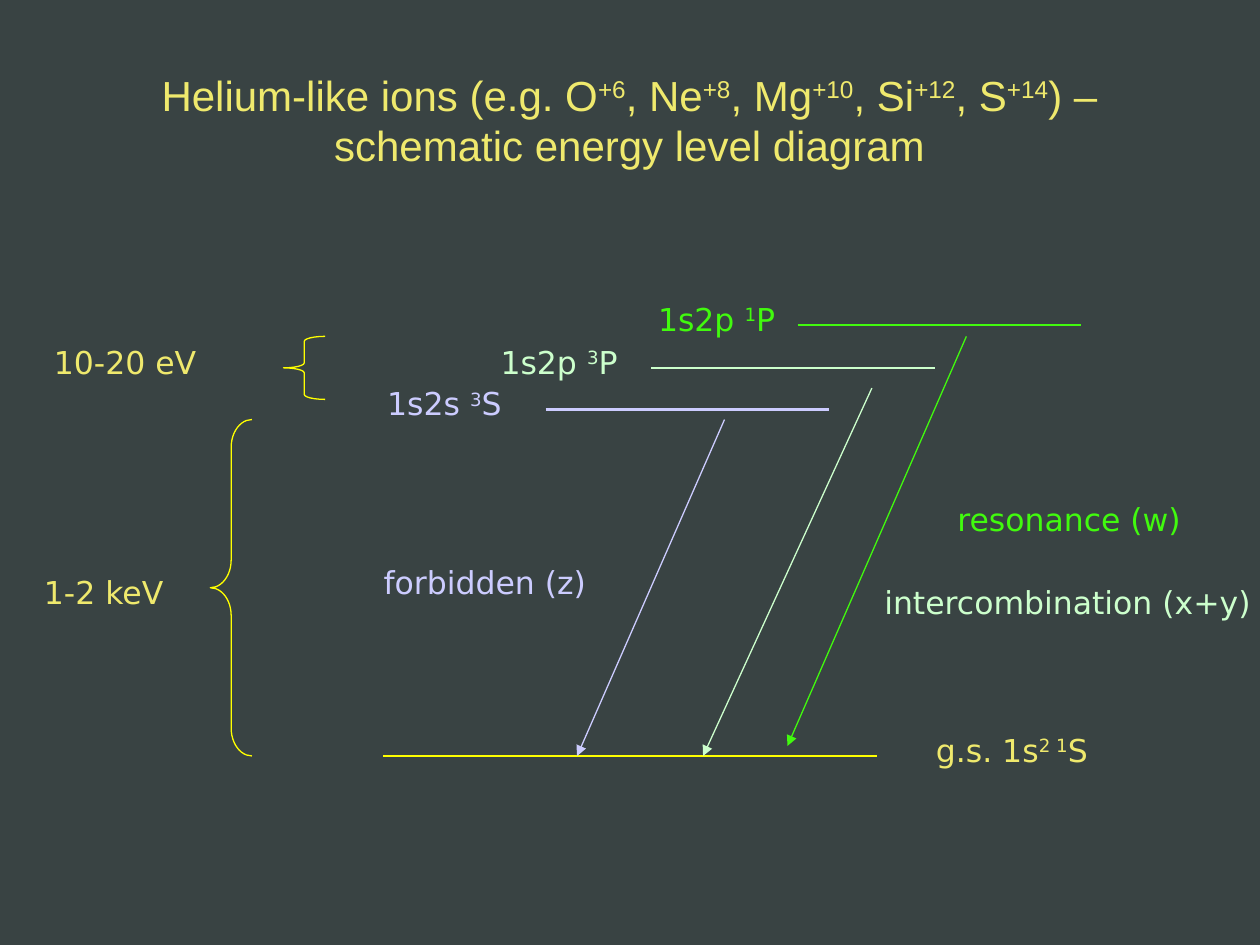
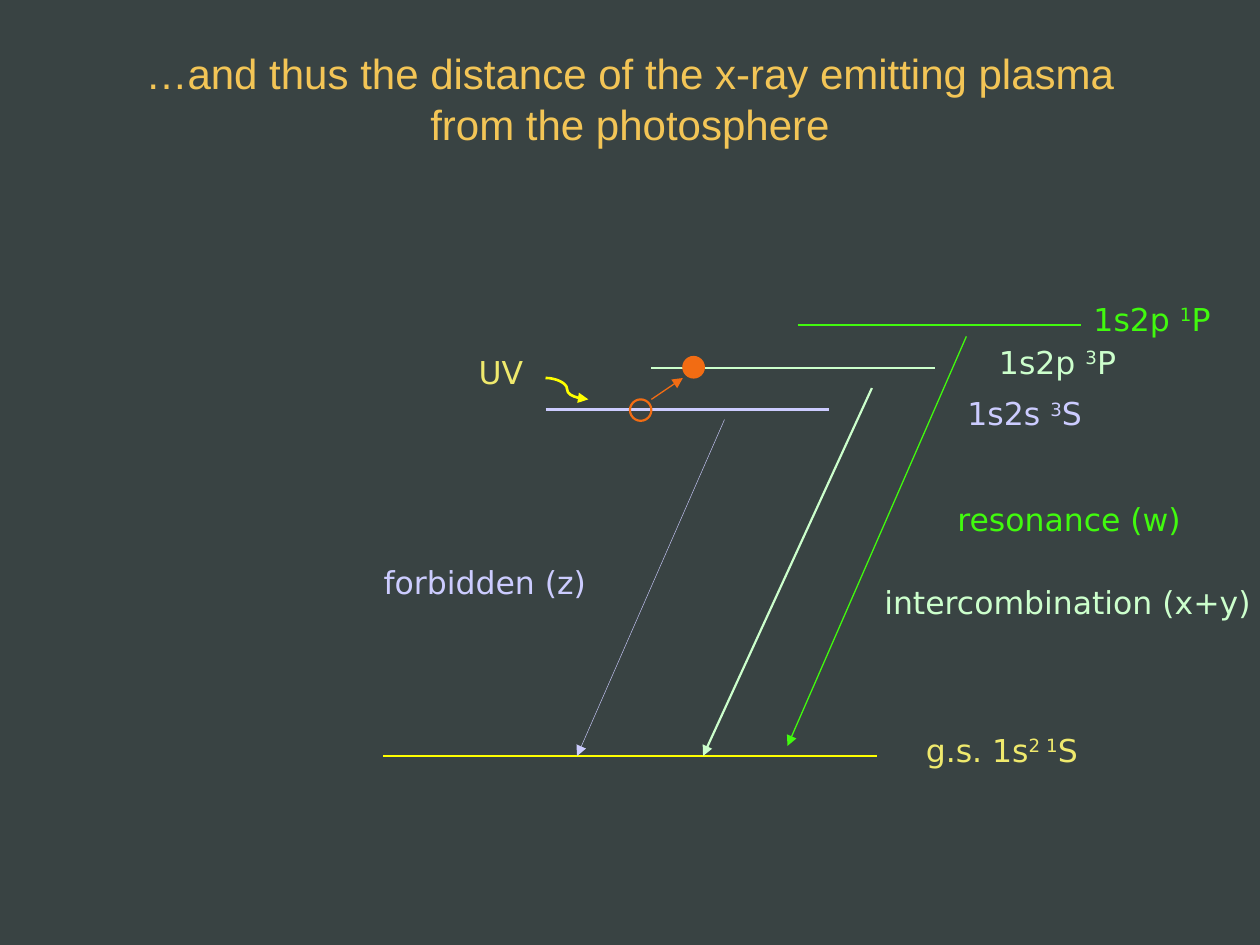
from dataclasses import dataclass
from lxml.etree import SubElement
from pptx import Presentation
from pptx.dml.color import RGBColor
from pptx.enum.shapes import MSO_CONNECTOR, MSO_SHAPE
from pptx.enum.text import MSO_ANCHOR, PP_ALIGN
from pptx.oxml.ns import qn
from pptx.util import Inches, Pt


@dataclass(frozen=True)
class Theme:
    back: str = "394343"
    pale: str = "EFE96D"
    gold: str = "F3C556"
    yellow: str = "FFFF00"
    lilac: str = "CCCCFF"
    mint: str = "CCFFCC"
    green: str = "41FA0E"
    orange: str = "F26C13"
    head_font: str = "Arial"
    font: str = "DejaVu Sans"
    head_size: float = 24
    size: float = 18
    hair: float = 0.25
    thin: float = 0.75
    bold: float = 1.25
    curve: float = 1.5


LEFT, RIGHT, MID = PP_ALIGN.LEFT, PP_ALIGN.RIGHT, PP_ALIGN.CENTER


def apply(target, values):
    for name, value in values.items():
        setattr(target, name, value)


class Deck:
    def __init__(self, theme):
        self.theme = theme
        self.show = Presentation()
        apply(self.show, {"slide_width": Inches(10), "slide_height": Inches(7.5)})
        self.slide = None

    def page(self):
        self.slide = self.show.slides.add_slide(self.show.slide_layouts[6])
        fill = self.slide.background.fill
        fill.solid()
        fill.fore_color.rgb = RGBColor.from_string(self.theme.back)

    def text(self, words, at, color, align=LEFT, font=None, size=None, wrap=True):
        """Write one paragraph; every second part between ^ marks is raised."""
        frame = self.slide.shapes.add_textbox(*map(Inches, at)).text_frame
        apply(frame, {"word_wrap": wrap, "vertical_anchor": MSO_ANCHOR.TOP})
        para = frame.paragraphs[0]
        para.alignment = align
        for i, part in enumerate(words.split("^")):
            run = para.add_run()
            run.text = part
            apply(run.font, {"name": font or self.theme.font,
                             "size": Pt(size or self.theme.size)})
            run.font.color.rgb = RGBColor.from_string(color)
            if i % 2:
                run._r.get_or_add_rPr().set("baseline", "30000")

    def title(self, words, at, color):
        self.text(words, at, color, MID, self.theme.head_font, self.theme.head_size)

    def stroke(self, item, color, width):
        item.line.color.rgb = RGBColor.from_string(color)
        item.line.width = Pt(width)

    def line(self, start, end, color, width, arrow=False, kind=MSO_CONNECTOR.STRAIGHT):
        item = self.slide.shapes.add_connector(kind, *map(Inches, (*start, *end)))
        self.stroke(item, color, width)
        props = item.element.spPr
        if arrow:
            SubElement(props.find(qn("a:ln")), qn("a:tailEnd"), type="triangle")
        SubElement(props, qn("a:effectLst"))

    def shape(self, kind, at, color, width, fill=None):
        item = self.slide.shapes.add_shape(kind, *map(Inches, at))
        item.shadow.inherit = False
        self.stroke(item, color, width)
        if fill:
            item.fill.solid()
            item.fill.fore_color.rgb = RGBColor.from_string(fill)
        else:
            item.fill.background()
        return item

    def brace(self, at, bend):
        item = self.shape(MSO_SHAPE.LEFT_BRACE, at, self.theme.yellow, self.theme.thin)
        item.adjustments[0] = bend

    def levels(self, lilac_width, mint_width):
        """Draw the levels, the decays and their names, as on both slides."""
        t = self.theme
        # Ground state and the three upper levels
        self.line((3.04, 6), (6.96, 6), t.yellow, t.bold)
        for x, y, color in ((4.33, 3.25, t.lilac), (5.17, 2.92, t.mint),
                            (6.33, 2.58, t.green)):
            self.line((x, y), (x + 2.25, y), color, t.bold)
        # Decays
        for start, end, color, width in (
                ((7.67, 2.67), (6.25, 5.92), t.green, t.thin),
                ((5.75, 3.33), (4.58, 6), t.lilac, lilac_width),
                ((6.92, 3.08), (5.58, 6), t.mint, mint_width)):
            self.line(start, end, color, width, arrow=True)
        # Decay names
        self.text("resonance (w)", (7.5, 3.92, 2.33, 0.4), t.green)
        self.text("intercombination (x+y)", (6.92, 4.58, 3.42, 0.4), t.mint)
        self.text("forbidden (z)", (1.83, 4.42, 2.92, 0.4), t.lilac, RIGHT)

    def states(self, spots, ground, align):
        """Name the levels; spots are the corners of 3S, 3P and 1P."""
        t = self.theme
        for words, spot, width, color, wrap in zip(
                ("1s2s ^3^S", "1s2p ^3^P", "1s2p ^1^P"), spots,
                (1.14, 1.25, 1.25), (t.lilac, t.mint, t.green),
                (False, True, True)):
            self.text(words, (*spot, width, 0.4), color, align, wrap=wrap)
        self.text("g.s. 1s^2 1^S", (ground, 5.75, 2.17, 0.4), t.pale)


def main():
    t = Theme()
    deck = Deck(t)

    # Slide 1: energy levels
    deck.page()
    deck.levels(t.thin, t.thin)
    deck.states(((2.94, 3), (3.75, 2.67), (5, 2.33)), 7.33, RIGHT)
    deck.brace((1.67, 3.33, 0.33, 2.67), 0.67)
    deck.brace((2.25, 2.67, 0.33, 0.5), 0.12)
    deck.text("10-20 eV", (0.33, 2.67, 1.5, 0.4), t.pale)
    deck.text("1-2 keV", (0.25, 4.5, 1.25, 0.4), t.pale)
    deck.title("Helium-like ions (e.g. O^+6^, Ne^+8^, Mg^+10^, Si^+12^, S^+14^) – "
               "schematic energy level diagram", (0.62, 0.5, 8.75, 0.9), t.pale)

    # Slide 2: UV lifts the electron from 3S to 3P
    deck.page()
    deck.levels(t.hair, t.bold)
    deck.states(((7.58, 3.08), (7.83, 2.67), (8.58, 2.33)), 7.25, LEFT)
    deck.shape(MSO_SHAPE.OVAL, (5, 3.17, 0.17, 0.17), t.orange, t.bold)
    deck.shape(MSO_SHAPE.OVAL, (5.42, 2.83, 0.17, 0.17), t.orange, t.thin, t.orange)
    deck.line((5.17, 3.17), (5.42, 3), t.orange, t.thin, arrow=True)
    deck.line((4.33, 3), (4.67, 3.17), t.yellow, t.curve, True, MSO_CONNECTOR.CURVE)
    deck.text("UV", (3.33, 2.75, 0.92, 0.4), t.pale, RIGHT)
    deck.title("…and thus the distance of the x-ray emitting plasma from the "
               "photosphere", (1, 0.33, 8, 0.9), t.gold)

    deck.show.save("out.pptx")


if __name__ == "__main__":
    main()
